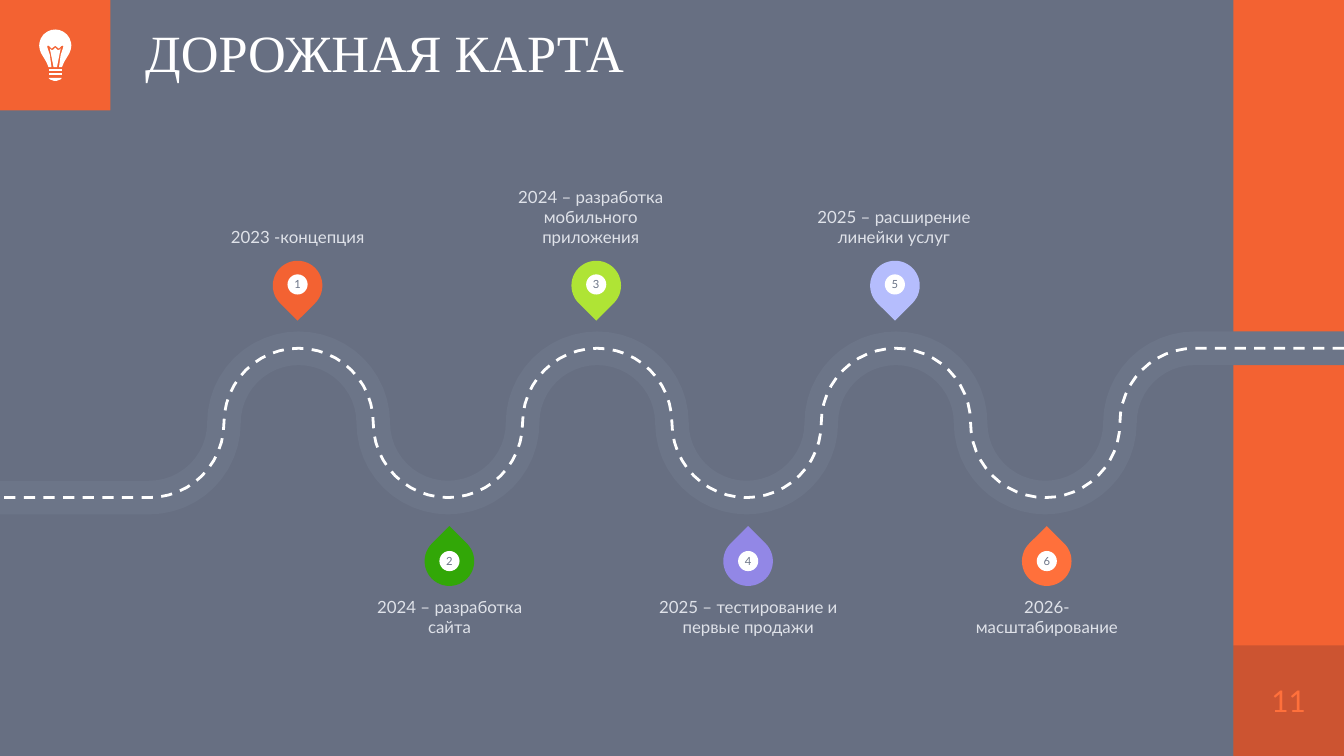
from math import cos, pi, sin

from lxml.etree import SubElement as Sub
from pptx import Presentation
from pptx.dml.color import RGBColor as Rgb
from pptx.enum.dml import MSO_LINE as Dash
from pptx.enum.shapes import MSO_SHAPE as Kind
from pptx.enum.text import MSO_ANCHOR as Anchor, MSO_AUTO_SIZE as Fit, PP_ALIGN as Align
from pptx.oxml.ns import qn
from pptx.util import Pt

HUES = {
    "back": "676F82", "navy": "02102E", "bar": "F36232", "road": "6C7588",
    "white": "FFFFFF", "label": "DFE2E9", "page": "FF703B",
}
WIDE, HIGH, SIDE = 720, 405, 59.2
STEP = 80  # distance between a crest and the next trough
STOPS = [
    ("2023 -концепция", "F36232", 0),
    ("2024 – разработка сайта", "32A707", 0),
    ("2024 – разработка мобильного приложения", "AFE435", -3),
    ("2025 – тестирование и первые продажи", "9287E6", 0),
    ("2025 – расширение линейки услуг", "B5BDFD", -0.6),
    ("2026- масштабирование", "FF703B", 0),
]
# Right halves of the bulb parts: offset from the axis, then height
BULB = [
    [(0, 0), (2.2, 0.3), (4.3, 1.2), (6.3, 2.7), (7.7, 4.8), (8.5, 7.2),
     (8.6, 8.7), (8.3, 10.7), (7.6, 12.7), (6.4, 14.7), (5, 17), (4.1, 18.9),
     (3.6, 20.2), (2, 20.2), (2.9, 13.7), (4.4, 9.2), (3.9, 8.6),
     (3.4, 8.8), (1.9, 10.2), (0, 8.7)],
    [(0, 9.7), (1.2, 10.9), (2.2, 10.9), (2.9, 10.2), (0.9, 20.2)],
    [(3.5, 20.9), (3.5, 22.4)],
    [(3.5, 23.1), (3.5, 24.5)],
    [(3.5, 26), (2.8, 26.8), (0.5, 27.6)],
]


def tint(item, hue):
    item.solid()
    item.fore_color.rgb = Rgb.from_string(hue)


def place(item, box):
    for name, size in zip(("left", "top", "width", "height"), box):
        setattr(item, name, Pt(size))


def write(item, text, hue, size, face="Lato", anchor=Anchor.MIDDLE, align=Align.CENTER):
    frame = item.text_frame
    look = {"word_wrap": True, "auto_size": Fit.NONE, "vertical_anchor": anchor}
    look.update({f"margin_{side}": 0 for side in ("left", "top", "right", "bottom")})
    for name, value in look.items():
        setattr(frame, name, value)
    para = frame.paragraphs[0]
    para.alignment = align
    run = para.add_run()
    run.text = text
    for name, value in {"name": face, "size": Pt(size), "bold": False}.items():
        setattr(run.font, name, value)
    tint(run.font.fill, hue)
    return run


def block(shapes, kind, box, hue):
    item = shapes.add_shape(kind, *map(Pt, box))
    item.shadow.inherit = False
    tint(item.fill, hue)
    item.line.fill.background()
    return item


def trace(shapes, dots, close):
    dots = [(Pt(x), Pt(y)) for x, y in dots]
    pen = shapes.build_freeform(*dots[0])
    pen.add_line_segments(dots[1:], close=close)
    item = pen.convert_to_shape()
    item.shadow.inherit = False
    return item


def head(slide, box):
    title = slide.shapes.title
    place(title, box)
    run = write(title, "ДОРОЖНАЯ КАРТА", HUES["white"], 28,
                "Times New Roman", align=Align.LEFT)
    title.text_frame.paragraphs[0].line_spacing = 0.9
    glow = Sub(run.font._element, qn("a:effectLst"))
    run.font._element.find(qn("a:solidFill")).addnext(glow)
    cast = Sub(glow, qn("a:outerShdw"), blurRad="38100", dist="38100", dir="2700000")
    shade = Sub(cast, qn("a:srgbClr"), val="000000")
    Sub(shade, qn("a:alpha"), val="43000")


def bulb(shapes, box):
    left, top, wide, high = box
    axis, peak = left + wide / 2, top + (high - 27.6) / 2
    group = shapes.add_group_shape()
    for half in BULB:
        full = half + [(-x, y) for x, y in reversed(half)]
        part = trace(group.shapes, [(axis + x, peak + y) for x, y in full], True)
        tint(part.fill, HUES["white"])
        part.line.fill.background()


def page(shapes, box):
    item = block(shapes, Kind.RECTANGLE, box, HUES["navy"])
    shade = item.fill._xPr.find(qn("a:solidFill"))[0]
    Sub(shade, qn("a:alpha"), val="16000")
    write(item, "11", HUES["page"], 16)


def road(shapes, box):
    """Draw a winding band of half circles, right to left, with a dashed middle."""
    left, top, wide, high = box
    ray, cuts, last = high / 2, 24, 7
    dots = [(left + wide, top)]
    for turn in range(last + 1):
        mid, sign = left + wide - STEP * (turn + 1), (-1) ** turn
        start = cuts // 2 if turn == 0 else 0
        stop = cuts // 2 if turn == last else cuts
        dots += [(mid + ray * cos(pi * n / cuts),
                  top + ray - sign * ray * sin(pi * n / cuts))
                 for n in range(start, stop + 1)]
    dots.append((left, top + high))
    for hue, size, dash in (("road", 18, None), ("white", 1.5, Dash.DASH)):
        path = trace(shapes, dots, False)
        path.fill.background()
        tint(path.line.fill, HUES[hue])
        path.line.width = Pt(size)
        path.line.dash_style = dash


def pin(shapes, box, number, hue, above):
    left, top, size, _ = box
    dot = 10.8
    gap = (size - dot) / 2
    group = shapes.add_group_shape()
    drop = block(group.shapes, Kind.TEAR, box, hue)
    drop.rotation = 135 if above else 315
    rise = 0.6 if above else 0
    disc = block(group.shapes, Kind.OVAL, (left + gap, top + gap - rise, dot, dot),
                 HUES["white"])
    write(disc, str(number), HUES["road"], 6)


def label(shapes, box, text, above):
    item = shapes.add_textbox(*map(Pt, box))
    write(item, text, HUES["label"], 9, anchor=Anchor.BOTTOM if above else Anchor.TOP)


def stops(shapes, box):
    """Set pins and labels in turn above the crests and below the troughs."""
    left, top, wide, high = box
    size, width, tall = 26.6, 101.5, 41.8
    for n, (text, hue, shift) in enumerate(STOPS):
        above = n % 2 == 0
        mid = left + STEP * (n + 2) + (-0.6 if above else 0.8)
        drop = top + 49 if above else top + high - 74.2
        note = top if above else top + high - tall
        pin(shapes, (mid - size / 2, drop, size, size), n + 1, hue, above)
        label(shapes, (mid + shift - width / 2, note, width, tall), text, above)


def main():
    deck = Presentation()
    deck.slide_width, deck.slide_height = Pt(WIDE), Pt(HIGH)
    slide = deck.slides.add_slide(deck.slide_layouts[5])
    shapes = slide.shapes
    tint(slide.background.fill, HUES["back"])
    edge = WIDE - SIDE
    badge = (0, 0, SIDE, SIDE)
    for box in ((edge, 0, SIDE, HIGH), badge):
        block(shapes, Kind.RECTANGLE, box, HUES["bar"])
    head(slide, (77.8, 0, edge - 77.8, SIDE))
    page(shapes, (edge, HIGH - SIDE, SIDE, SIDE))
    road(shapes, (0, 186.6, WIDE, STEP))
    stops(shapes, (0, 90.7, WIDE, 270.8))
    bulb(shapes, badge)
    deck.save("out.pptx")


if __name__ == "__main__":
    main()
